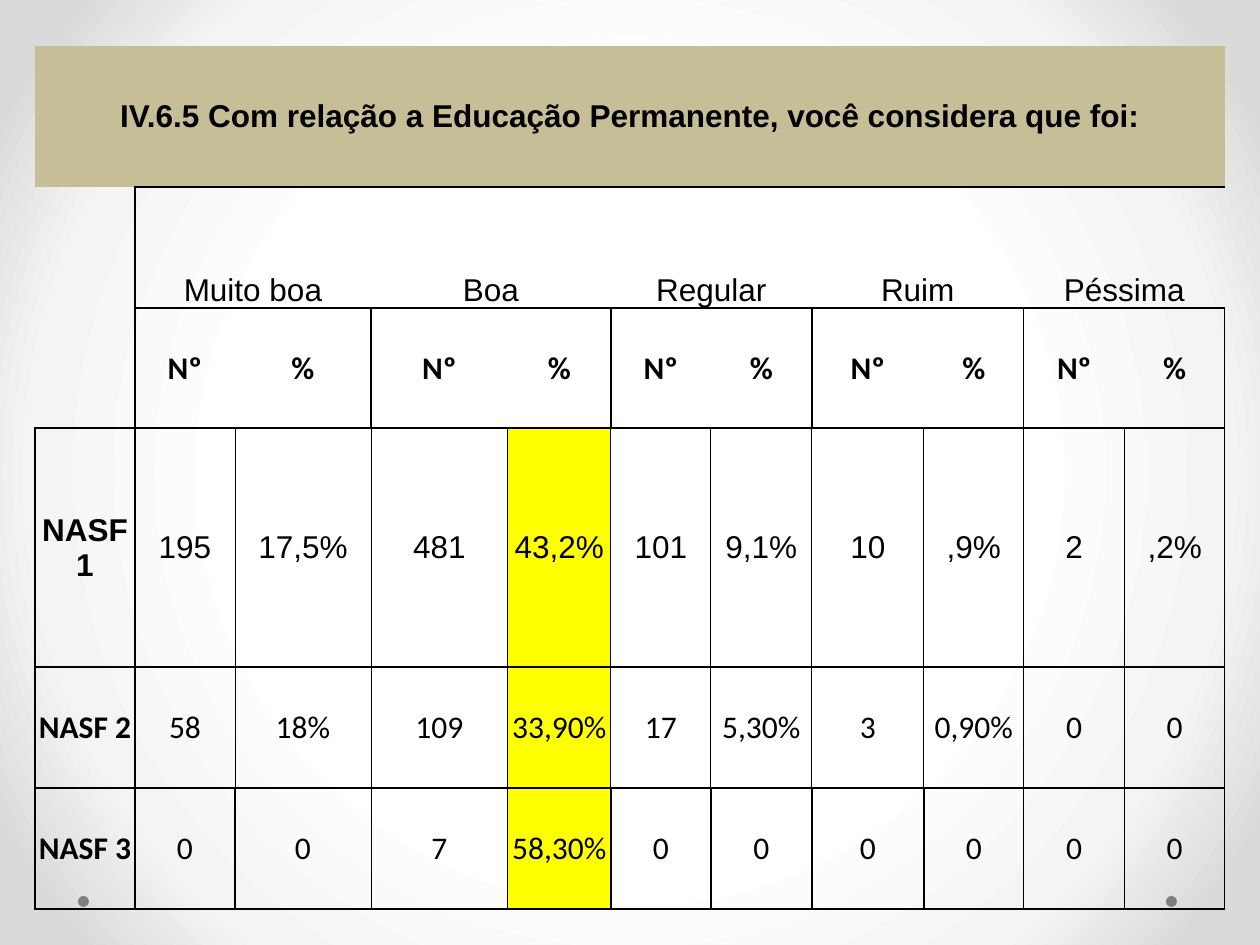
import lxml.etree
import pptx
import pptx.dml.color
import pptx.enum.shapes
import pptx.enum.text
import pptx.oxml.ns
import pptx.util

QUESTION = "IV.6.5 Com relação a Educação Permanente, você considera que foi:"
RATINGS = ["Muito boa", "Boa", "Regular", "Ruim", "Péssima"]
TEAMS = [
    ["NASF 1", "195", "17,5%", "481", "43,2%", "101", "9,1%", "10", ",9%", "2", ",2%"],
    ["NASF 2", "58", "18%", "109", "33,90%", "17", "5,30%", "3", "0,90%", "0", "0"],
    ["NASF 3", "0", "0", "7", "58,30%", "0", "0", "0", "0", "0", "0"],
]
WIDTHS = [100, 100, 136, 137, 103, 100, 101, 112, 100, 101, 100]
HEIGHTS = [141, 121, 120, 239, 121, 121]
FONTS = ["Arial", "Arial", "Calibri", "Arial", "Calibri", "Calibri"]
COLUMNS = len(WIDTHS)
HEADER_ROWS = 3
HIGHLIGHT_COLUMN = 4
BACKDROP = [(0, "FFFFFF"), (50, "FFFFFF"), (76, "F4F4F4"), (92, "DADADA"), (100, "DADADA")]
DOT_LEFTS = [1166, 78]

THICK, THIN = 1, 0.5
TEAM_RULES = [THICK] * 2 + [THIN] * 10
UPRIGHT_RULES = [
    [0] * 12,
    [0, THICK] + [0] * 10,
    [0, THICK] * 6,
    TEAM_RULES,
    TEAM_RULES,
    [THICK] * 3 + [THIN] * 2 + [THICK] * 6 + [THIN],
]


def px(length):
    return pptx.util.Emu(length * 914400 // 126)


def paint(fill, color):
    fill.solid()
    fill.fore_color.rgb = pptx.dml.color.RGBColor.from_string(color)


def add_node(parent, tag, **attributes):
    return lxml.etree.SubElement(parent, pptx.oxml.ns.qn(tag), attributes)


def paint_backdrop(slide):
    slide.background.fill.gradient()
    gradient = slide.element.find(".//" + pptx.oxml.ns.qn("a:gradFill"))
    for child in list(gradient):
        gradient.remove(child)
    stops = add_node(gradient, "a:gsLst")
    for position, color in BACKDROP:
        stop = add_node(stops, "a:gs", pos=str(position * 1000))
        add_node(stop, "a:srgbClr", val=color)
    center = add_node(gradient, "a:path", path="circle")
    add_node(center, "a:fillToRect", l="50000", t="50000", r="50000", b="50000")


def flat_rule(edge, column):
    if edge == 0 or (column == 0 and edge < HEADER_ROWS):
        return 0
    return THICK


def draw_borders(cell, row, column):
    uprights = UPRIGHT_RULES[row]
    rules = {
        "a:lnL": uprights[column],
        "a:lnR": uprights[column + 1],
        "a:lnT": flat_rule(row, column),
        "a:lnB": flat_rule(row + 1, column),
    }
    properties = cell._tc.get_or_add_tcPr()
    for index, (tag, points) in enumerate(rules.items()):
        line = add_node(properties, tag, w=str(int(points * 12700)))
        if points:
            add_node(add_node(line, "a:solidFill"), "a:srgbClr", val="000000")
        else:
            add_node(line, "a:noFill")
        properties.insert(index, line)


def fill_cell(cell, row, column, text):
    cell.margin_left = cell.margin_right = cell.margin_top = px(1)
    cell.margin_bottom = 0
    anchor = pptx.enum.text.MSO_ANCHOR
    cell.vertical_anchor = anchor.BOTTOM if row == 1 else anchor.MIDDLE
    if row == 0:
        paint(cell.fill, "C5BE97")
    elif row >= HEADER_ROWS and column == HIGHLIGHT_COLUMN:
        paint(cell.fill, "FFFF00")
    else:
        cell.fill.background()
    draw_borders(cell, row, column)
    paragraph = cell.text_frame.paragraphs[0]
    paragraph.text = text
    paragraph.alignment = pptx.enum.text.PP_ALIGN.CENTER
    font = paragraph.font
    for font in [paragraph.font] + [run.font for run in paragraph.runs]:
        font.size = pptx.util.Pt(18)
        font.name = FONTS[row]
        font.bold = row in (0, 2) or column == 0
        paint(font.fill, "000000")


def add_survey(slide):
    rating_row = [""] + [text for rating in RATINGS for text in (rating, "")]
    unit_row = [""] + ["Nº", "%"] * len(RATINGS)
    rows = [[QUESTION] + [""] * (COLUMNS - 1), rating_row, unit_row] + TEAMS
    survey = slide.shapes.add_table(
        len(rows), COLUMNS, px(35), px(46), px(sum(WIDTHS)), px(sum(HEIGHTS))
    ).table
    survey.first_row = survey.horz_banding = False
    for column, width in zip(survey.columns, WIDTHS):
        column.width = px(width)
    for row, height in zip(survey.rows, HEIGHTS):
        row.height = px(height)
    for row, texts in enumerate(rows):
        for column, text in enumerate(texts):
            fill_cell(survey.cell(row, column), row, column, text)
    survey.cell(0, 0).merge(survey.cell(0, COLUMNS - 1))
    survey.cell(1, 0).merge(survey.cell(2, 0))
    for column in range(1, COLUMNS, 2):
        survey.cell(1, column).merge(survey.cell(1, column + 1))


def main():
    """Build the survey slide on continuing education."""
    deck = pptx.Presentation()
    deck.slide_width, deck.slide_height = px(1260), px(945)
    slide = deck.slides.add_slide(deck.slide_layouts[6])
    paint_backdrop(slide)
    for left in DOT_LEFTS:
        dot = slide.shapes.add_shape(
            pptx.enum.shapes.MSO_SHAPE.OVAL, px(left), px(896), px(11), px(11)
        )
        dot.shadow.inherit = False
        paint(dot.fill, "808080")
        dot.line.fill.background()
    add_survey(slide)
    deck.save("out.pptx")


if __name__ == "__main__":
    main()
